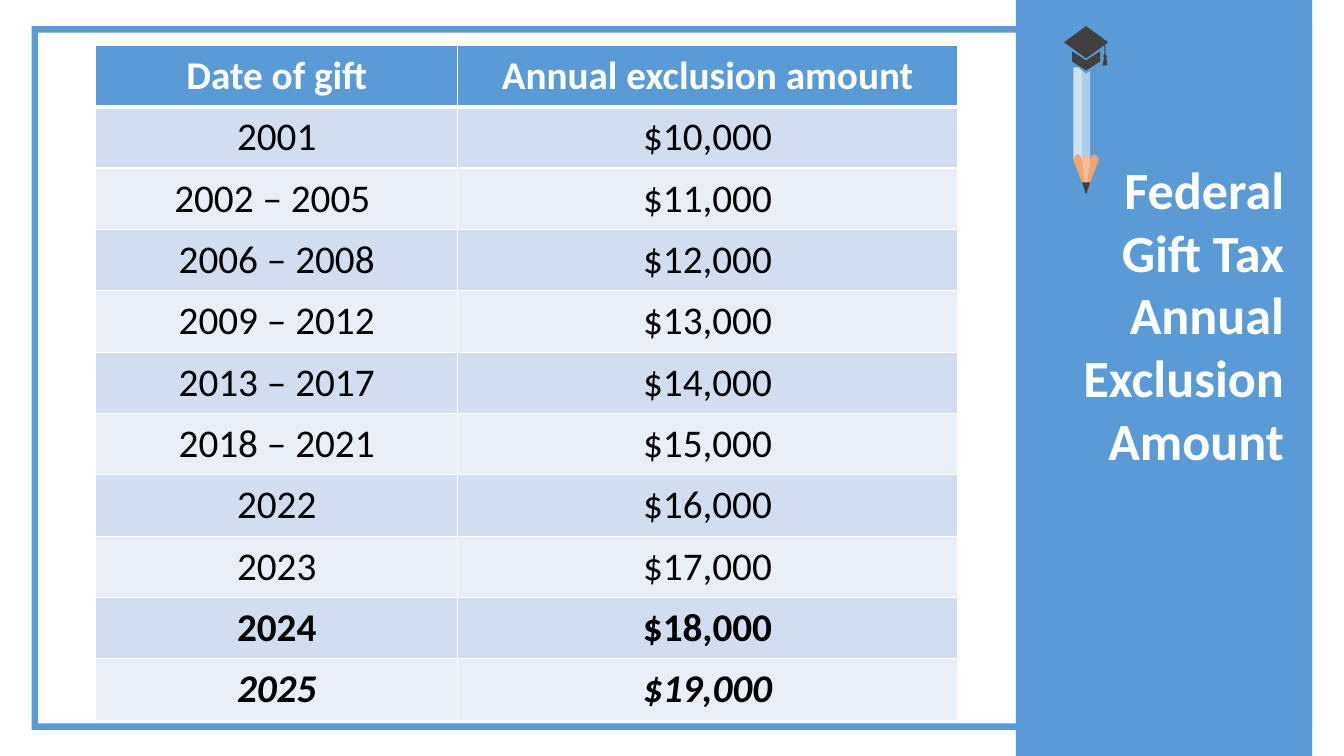
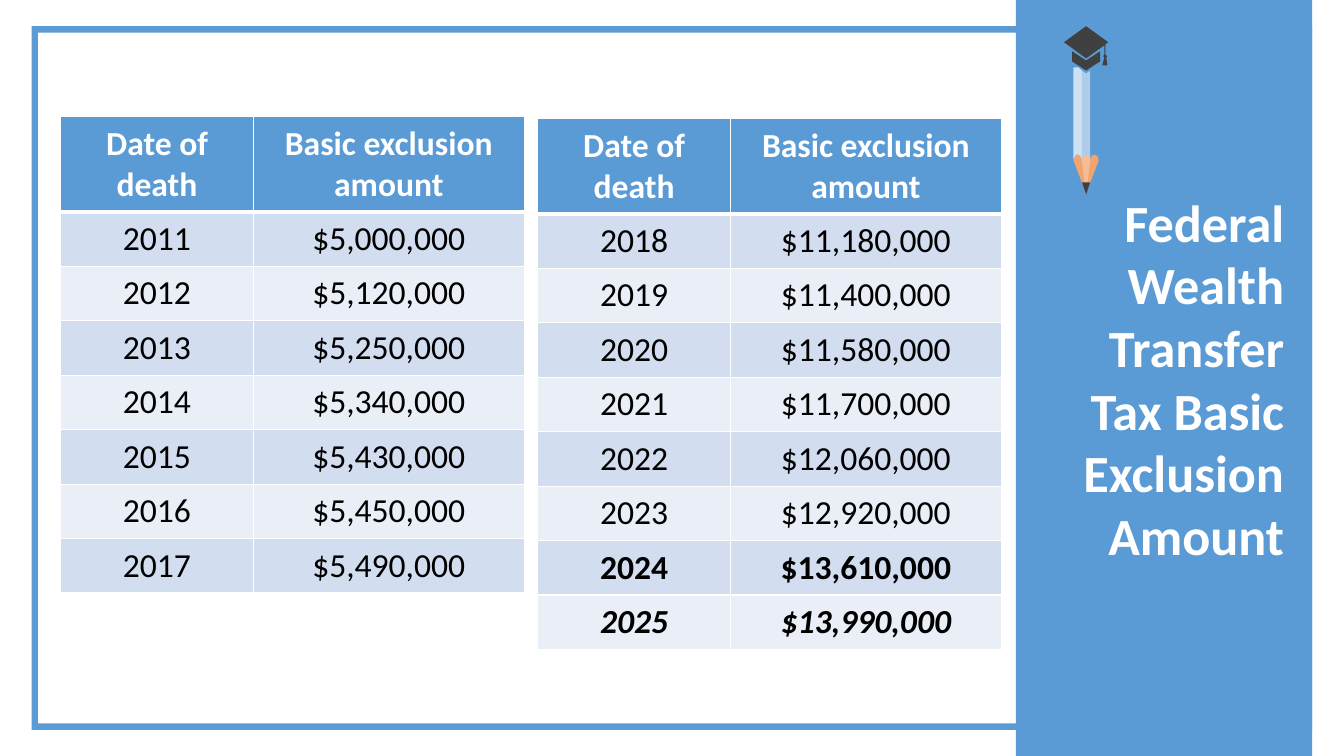
"""Build two slides of federal gift and wealth transfer tax exclusion tables."""
import pptx
import pptx.dml.color
import pptx.enum.shapes
import pptx.enum.text
import pptx.oxml
import pptx.oxml.ns
import pptx.util

Pt = pptx.util.Pt
SHAPE = pptx.enum.shapes.MSO_SHAPE
ALIGN = pptx.enum.text.PP_ALIGN
MIDDLE = pptx.enum.text.MSO_ANCHOR.MIDDLE

COLOURS = {
    "blue": "5B9BD5", "white": "FFFFFF", "black": "000000",
    "dark_row": "D2DEEF", "light_row": "EAEFF7", "charcoal": "404040",
    "wood": "F2A46F", "light_wood": "F6BE98",
    "pale_blue": "CEE1F2", "mid_blue": "ADCDEA",
}
FONT = "Calibri"
ICON_LEFT, ICON_TOP = 760, 18.7

CAP = [
    [(5.8, 18), (15.8, 24.5), (25.8, 18), (25.8, 25.2), (15.8, 31.7), (5.8, 25.2)],
    [(15.8, 0), (31.6, 11.5), (29.5, 13), (29.5, 20.2), (31, 21.6), (30.2, 22.3),
     (31, 28), (27.4, 28), (28.8, 22.3), (28.1, 21.6), (28.8, 20.2), (28.8, 13.7),
     (15.8, 23), (0, 11.5)],
]
TIP = [[(6.8, 91.5), (24.8, 91.5), (24.8, 96), (15.8, 119.5), (6.8, 96)]]
TIP_LIGHT = [[(12.8, 91.5), (18.8, 91.5), (18.8, 95), (15.8, 119.5), (12.8, 96)]]
STRIPS = [
    ("pale_blue", [(0, 29.5), (3.6, 29.5), (6, 31.7)]),
    ("mid_blue", [(0, 31.7), (3, 33.8), (6, 31.7)]),
    ("blue", [(0, 31.7), (2.4, 29.5), (6, 29.5)]),
]
SCALLOP = [(6, 95), (4.8, 92.4), (3, 91.5), (1.2, 92.4), (0, 95)]

pencil = [("wood", TIP), ("light_wood", TIP_LIGHT)]
for index, (strip_colour, strip_top) in enumerate(STRIPS):
    strip = [(6.8 + 6 * index + x, y) for x, y in strip_top + SCALLOP]
    pencil.append((strip_colour, [strip]))
pencil.append(("charcoal", [[(13, 130.3), (18.6, 130.3), (15.8, 139)]]))
pencil[-1] = ("charcoal", [[(12.9, 111.6), (18.7, 111.6), (15.8, 120.2)]])
pencil.append(("charcoal", CAP))

GIFT_ROWS = [
    ("Date of gift", "Annual exclusion amount"),
    ("2001", "$10,000"), ("2002 – 2005 ", "$11,000"), ("2006 – 2008", "$12,000"),
    ("2009 – 2012", "$13,000"), ("2013 – 2017", "$14,000"), ("2018 – 2021", "$15,000"),
    ("2022", "$16,000"), ("2023", "$17,000"), ("2024", "$18,000"), ("2025", "$19,000"),
]
DEATH_HEADER = ("Date of death", "Basic exclusion amount")
EARLY_ROWS = [
    DEATH_HEADER,
    ("2011", "$5,000,000"), ("2012", "$5,120,000"), ("2013", "$5,250,000"),
    ("2014", "$5,340,000"), ("2015", "$5,430,000"), ("2016", "$5,450,000"),
    ("2017", "$5,490,000"),
]
LATE_ROWS = [
    DEATH_HEADER,
    ("2018", "$11,180,000"), ("2019", "$11,400,000"), ("2020", "$11,580,000"),
    ("2021", "$11,700,000"), ("2022", "$12,060,000"), ("2023", "$12,920,000"),
    ("2024", "$13,610,000"), ("2025", "$13,990,000"),
]
GIFT_LOOK = {"widths": (258.5, 357), "header": 43.8, "row": 43.8, "size": 28}
DEATH_LOOK = {"widths": (137.5, 193.7), "header": 68.2, "row": 38.9, "size": 24}
SLIDES = [
    ("Federal Gift Tax Annual Exclusion Amount", 411,
     [(68.4, 32.4, GIFT_ROWS, GIFT_LOOK)]),
    ("Federal Wealth Transfer Tax Basic Exclusion Amount", 502.6,
     [(43.4, 83.2, EARLY_ROWS, DEATH_LOOK), (384.2, 84.6, LATE_ROWS, DEATH_LOOK)]),
]


def paint(shape, colour):
    shape.shadow.inherit = False
    shape.fill.solid()
    shape.fill.fore_color.rgb = pptx.dml.color.RGBColor.from_string(COLOURS[colour])
    shape.line.fill.background()


def write(paragraph, text, size, colour, bold, italic=False):
    run = paragraph.add_run()
    run.text = text
    run.font.name = FONT
    run.font.size = Pt(size)
    run.font.bold = bold
    run.font.italic = italic
    run.font.color.rgb = pptx.dml.color.RGBColor.from_string(COLOURS[colour])


deck = pptx.Presentation()
deck.slide_width, deck.slide_height = Pt(960), Pt(540)

for heading, title_height, tables in SLIDES:
    slide = deck.slides.add_slide(deck.slide_layouts[5])

    border = slide.shapes.add_shape(SHAPE.FRAME, Pt(22.6), Pt(18.7), Pt(914.6), Pt(502.6))
    border.adjustments[0] = 0.009
    paint(border, "blue")
    band = slide.shapes.add_shape(SHAPE.RECTANGLE, Pt(725.6), 0, Pt(211.6), Pt(540))
    paint(band, "blue")

    title = slide.shapes.title
    band.element.addnext(title.element)
    title.left, title.top = Pt(743.8), Pt(18.7)
    title.width, title.height = Pt(180.7), Pt(title_height)
    title.text_frame.word_wrap = True
    title.text_frame.auto_size = pptx.enum.text.MSO_AUTO_SIZE.NONE
    title.text_frame.vertical_anchor = MIDDLE
    title_line = title.text_frame.paragraphs[0]
    title_line.alignment = ALIGN.RIGHT
    title_line.space_before = Pt(4)
    write(title_line, heading, 37.3, "white", True)

    for colour, contours in pencil:
        first, *others = [[(x * 100, y * 100) for x, y in points] for points in contours]
        outline = slide.shapes.build_freeform(*first[0], scale=Pt(1) / 100)
        outline.add_line_segments(first[1:], close=True)
        for points in others:
            outline.move_to(*points[0])
            outline.add_line_segments(points[1:], close=True)
        paint(outline.convert_to_shape(Pt(ICON_LEFT), Pt(ICON_TOP)), colour)

    for left, top, rows, look in tables:
        heights = [look["header"]] + [look["row"]] * (len(rows) - 1)
        table = slide.shapes.add_table(
            len(rows), 2, Pt(left), Pt(top), Pt(sum(look["widths"])), Pt(sum(heights))).table
        for column, width in zip(table.columns, look["widths"]):
            column.width = Pt(width)
        for row_index, values in enumerate(rows):
            table.rows[row_index].height = Pt(heights[row_index])
            is_header = row_index == 0
            bold = is_header or values[0] in ("2024", "2025")
            row_fill = "blue" if is_header else "dark_row" if row_index % 2 else "light_row"
            for column_index, value in enumerate(values):
                cell = table.cell(row_index, column_index)
                cell.margin_left = cell.margin_right = Pt(9.6)
                cell.margin_top = cell.margin_bottom = Pt(4.8)
                edges = {"lnL": 1, "lnR": 1, "lnT": 3 if row_index == 1 else 1,
                         "lnB": 3 if is_header else 1}
                for edge, thickness in edges.items():
                    cell._tc.get_or_add_tcPr().append(pptx.oxml.parse_xml(
                        f'<a:{edge} {pptx.oxml.ns.nsdecls("a")} w="{Pt(thickness)}"><a:solidFill>'
                        f'<a:srgbClr val="{COLOURS["white"]}"/></a:solidFill></a:{edge}>'))
                cell.fill.solid()
                cell.fill.fore_color.rgb = pptx.dml.color.RGBColor.from_string(COLOURS[row_fill])
                entry = cell.text_frame.paragraphs[0]
                entry.alignment = ALIGN.CENTER
                write(entry, value, look["size"], "white" if is_header else "black",
                      bold, values[0] == "2025")

deck.save("out.pptx")
